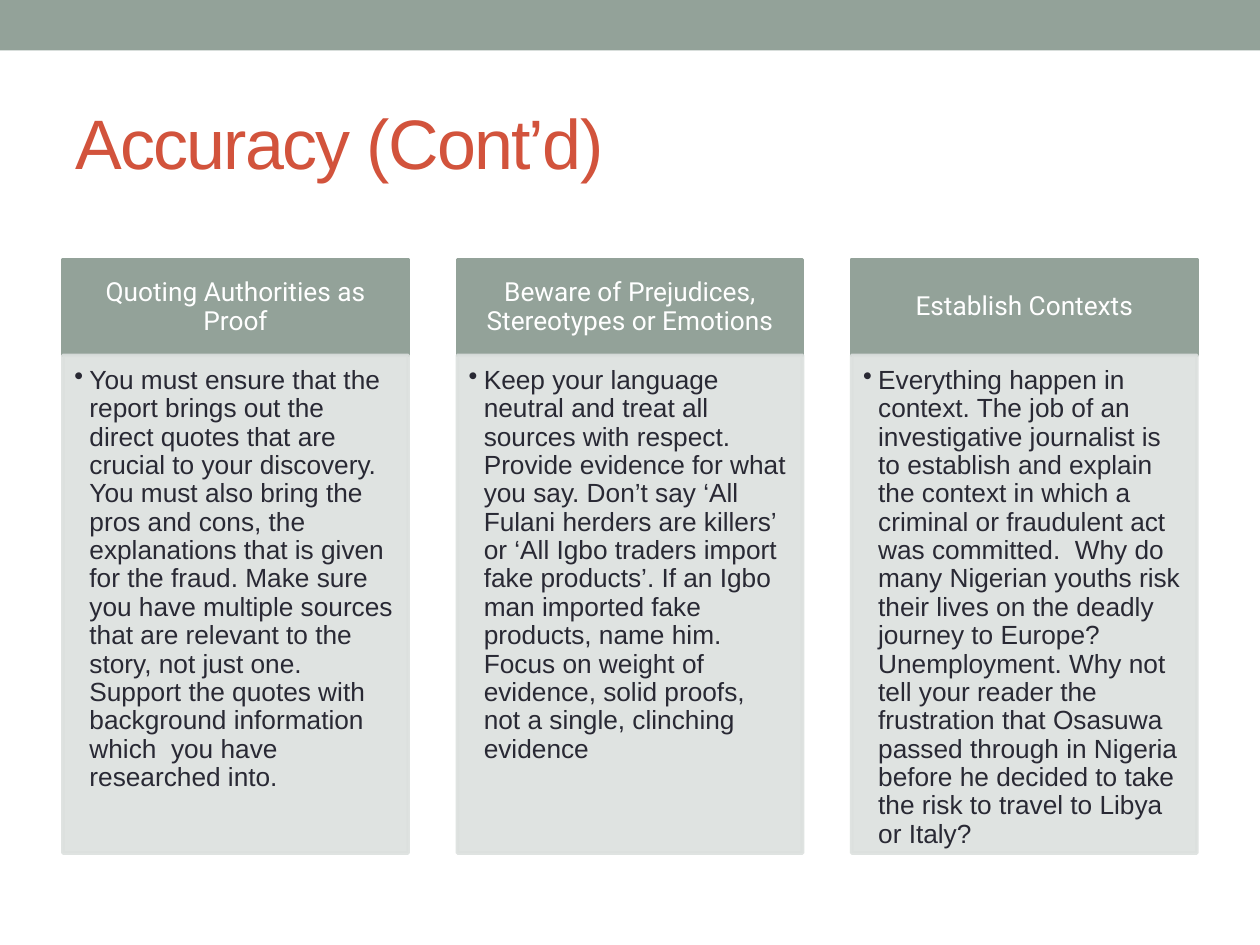
from lxml.etree import SubElement
from pptx import Presentation
from pptx.dml.color import RGBColor
from pptx.enum.shapes import MSO_SHAPE as Shape
from pptx.enum.text import MSO_ANCHOR as Anchor, PP_ALIGN as Align
from pptx.oxml.ns import qn
from pptx.util import Inches, Pt

WIDTH, HEIGHT = 10, 7.5
MARGIN = 0.5
COLUMN_WIDTH = 2.74
COLUMN_STEP = (WIDTH - 2 * MARGIN - COLUMN_WIDTH) / 2
HEADER_TOP, BODY_TOP, BODY_BOTTOM = 2.06, 2.82, 6.77
HEADER_INSETS = (0.12, 0.07, 0.12, 0.07)
BODY_INSETS = (0.09, 0.09, 0.12, 0.13)
COLORS = {
    "sage": "93A299",
    "panel": "DCE0DE",
    "title": "D2533C",
    "text": "292934",
    "white": "FFFFFF",
}
COLUMNS = [
    (
        "Quoting Authorities as Proof",
        "You must ensure that the report brings out the direct quotes that are crucial to your "
        "discovery. You must also bring the pros and cons, the explanations that is given for the "
        "fraud. Make sure you have multiple sources that are relevant to the story, not just one. "
        "Support the quotes with background information which  you have researched into.",
    ),
    (
        "Beware of Prejudices, Stereotypes or Emotions",
        "Keep your language neutral and treat all sources with respect. Provide evidence for what "
        "you say. Don’t say ‘All Fulani herders are killers’ or ‘All Igbo traders import fake "
        "products’. If an Igbo man imported fake products, name him. Focus on weight of evidence, "
        "solid proofs, not a single, clinching evidence",
    ),
    (
        "Establish Contexts",
        "Everything happen in context. The job of an investigative journalist is to establish and "
        "explain the context in which a criminal or fraudulent act was committed.  Why do many "
        "Nigerian youths risk their lives on the deadly journey to Europe? Unemployment. Why not "
        "tell your reader the frustration that Osasuwa passed through in Nigeria before he decided "
        "to take the risk to travel to Libya or Italy?",
    ),
]


def color(name):
    return RGBColor.from_string(COLORS[name])


def add_block(slide, box, fill, outlined=True):
    shape = slide.shapes.add_shape(Shape.RECTANGLE, *map(Inches, box))
    shape.shadow.inherit = False
    shape.fill.solid()
    shape.fill.fore_color.rgb = color(fill)
    if outlined:
        shape.line.color.rgb = color(fill)
        shape.line.width = Pt(2.08)
    else:
        shape.line.fill.background()
    return shape


def write(shape, text, font, size, color_name, anchor, align, insets):
    frame = shape.text_frame
    frame.text = text
    frame.word_wrap = True
    frame.vertical_anchor = anchor
    frame.margin_left, frame.margin_top, frame.margin_right, frame.margin_bottom = map(Inches, insets)
    paragraph = frame.paragraphs[0]
    paragraph.alignment = align
    run = paragraph.runs[0]
    run.font.name = font
    run.font.size = Pt(size)
    run.font.color.rgb = color(color_name)
    return paragraph


def set_opacity(shape, percent):
    for color_element in shape._element.spPr.iter(qn("a:srgbClr")):
        SubElement(color_element, qn("a:alpha"), val=str(percent * 1000))


def add_bullet(paragraph, indent):
    properties = paragraph._p.get_or_add_pPr()
    properties.set("marL", str(Inches(indent)))
    properties.set("indent", str(-Inches(indent)))
    SubElement(properties, qn("a:buChar"), char="•")


def add_title(slide, text):
    box = (MARGIN, 0.58, WIDTH - 2 * MARGIN, 1.08)
    title = slide.shapes.add_textbox(*map(Inches, box))
    paragraph = write(title, text, "Arial", 40, "title", Anchor.MIDDLE, Align.LEFT, (0.1, 0.05, 0.1, 0.05))
    paragraph.runs[0]._r.get_or_add_rPr().set("spc", "-100")


def add_column(slide, index, heading, body):
    left = MARGIN + index * COLUMN_STEP
    header = add_block(slide, (left, HEADER_TOP, COLUMN_WIDTH, BODY_TOP - HEADER_TOP), "sage")
    paragraph = write(header, heading, "Roboto", 15, "white", Anchor.MIDDLE, Align.CENTER, HEADER_INSETS)
    paragraph.line_spacing = 0.9

    panel = add_block(slide, (left, BODY_TOP, COLUMN_WIDTH, BODY_BOTTOM - BODY_TOP), "panel")
    set_opacity(panel, 90)
    paragraph = write(panel, body, "Arial", 15, "text", Anchor.TOP, Align.LEFT, BODY_INSETS)
    paragraph.level = 1
    paragraph.line_spacing = 0.9
    add_bullet(paragraph, 0.12)


def main():
    presentation = Presentation()
    presentation.slide_width, presentation.slide_height = Inches(WIDTH), Inches(HEIGHT)
    slide = presentation.slides.add_slide(presentation.slide_layouts[6])
    add_block(slide, (0, 0, WIDTH, 0.4), "sage", outlined=False)
    add_title(slide, "Accuracy (Cont’d)")
    for index, (heading, body) in enumerate(COLUMNS):
        add_column(slide, index, heading, body)
    presentation.save("out.pptx")


if __name__ == "__main__":
    main()
